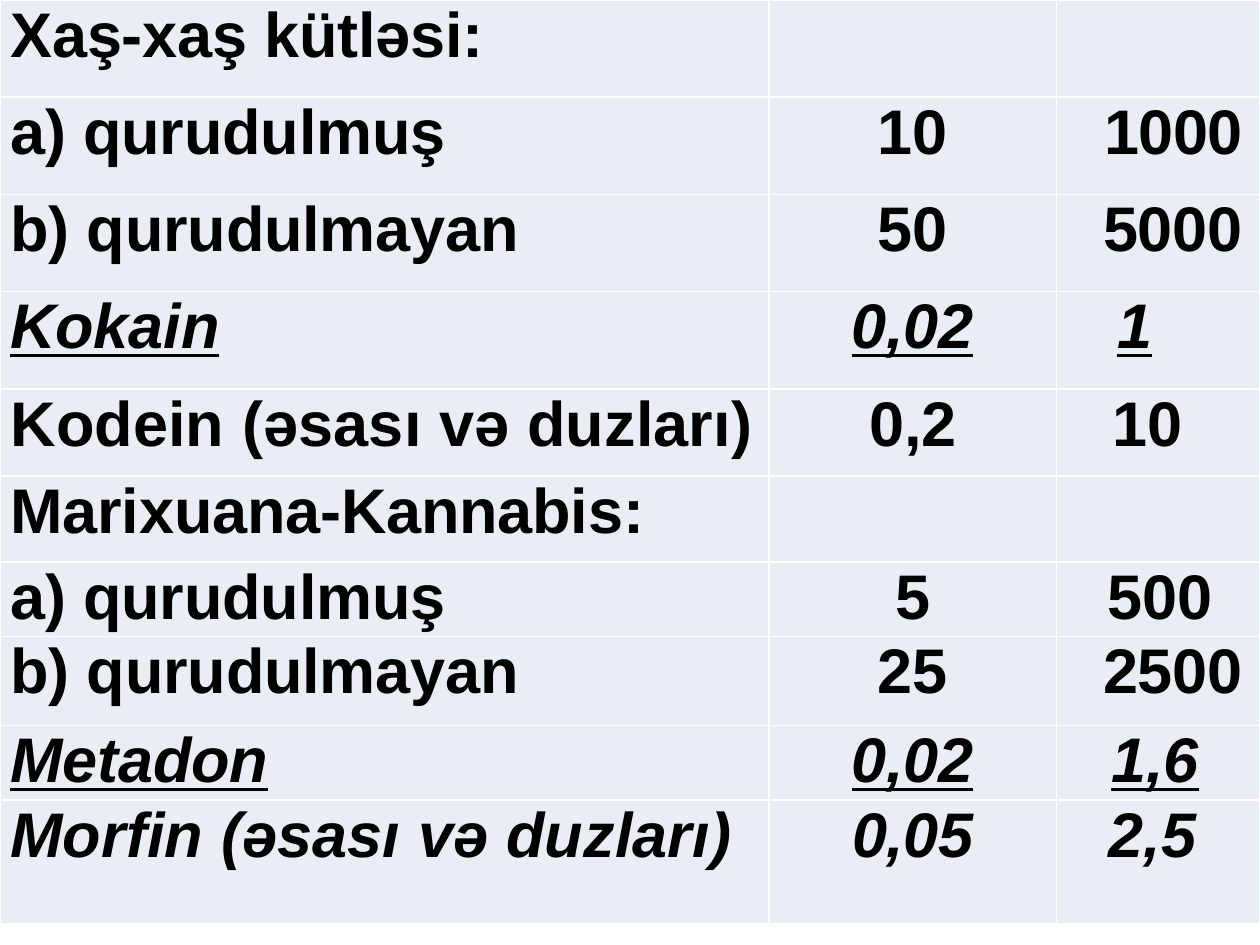
from lxml.etree import SubElement
from pptx import Presentation
from pptx.dml.color import RGBColor
from pptx.enum.text import PP_ALIGN as Align
from pptx.oxml.ns import qn
from pptx.util import Cm, Pt

COLORS = {"text": "000000", "cell": "E9EDF4", "border": "FFFFFF"}
COL_WIDTHS = [15.5, 5.8, 4.1]
LABEL_INDENT = 0.13

# Row height, style ("b" bold, "i" italic, "u" underline), then for label,
# small amount and large amount: text and letter spacing; last, indent of the large amount
ROWS = [
    (1.96, "b", ("Xaş-xaş kütləsi:", -0.1), None, None, 0),
    (1.96, "b", ("a) qurudulmuş", -0.1), ("10", 0), ("1000", -0.5), 0.89),
    (1.96, "b", ("b) qurudulmayan", -0.1), ("50", 0), ("5000", -0.2), 0.86),
    (1.96, "biu", ("Kokain", -0.1), ("0,02", -0.2), ("1", 0), 1.14),
    (1.76, "b", ("Kodein (əsası və duzları)", 0.1), ("0,2", 0), ("10", 0), 1.04),
    (1.73, "b", ("Marixuana-Kannabis:", -0.1), None, None, 0),
    (1.5, "b", ("a) qurudulmuş", -0.1), ("5", 0), ("500", 0), 0.94),
    (1.8, "b", ("b) qurudulmayan", -0.1), ("25", 0), ("2500", -0.2), 0.86),
    (1.5, "biu", ("Metadon", -0.1), ("0,02", -0.2), ("1,6", 0), 1.02),
    (2.5, "bi", ("Morfin (əsası və duzları)", 0.1), ("0,05", -0.3), ("2,5", 0), 0.97),
]


def rgb(name):
    return RGBColor.from_string(COLORS[name])


def set_borders(cell):
    tc_pr = cell._tc.get_or_add_tcPr()
    for i, side in enumerate(("lnL", "lnR", "lnT", "lnB")):
        ln = tc_pr.makeelement(qn(f"a:{side}"), {"w": str(Pt(1))})
        fill = SubElement(ln, qn("a:solidFill"))
        SubElement(fill, qn("a:srgbClr"), val=COLORS["border"])
        tc_pr.insert(i, ln)


def format_cell(cell):
    cell.fill.solid()
    cell.fill.fore_color.rgb = rgb("cell")
    cell.margin_left = cell.margin_right = Cm(0.08)
    cell.margin_top = cell.margin_bottom = 0
    set_borders(cell)


def write_cell(cell, text, spacing, style, indent=0, align=Align.LEFT):
    p = cell.text_frame.paragraphs[0]
    p.alignment = align
    p_pr = p._p.get_or_add_pPr()
    p_pr.set("marL", str(Cm(indent)))
    p_pr.set("indent", "0")
    font = p.font
    font.name, font.size = "Arial", Pt(36)
    font.color.rgb = rgb("text")
    font.bold, font.italic, font.underline = (mark in style for mark in "biu")
    r = p.add_run()
    r.text = text
    r._r.get_or_add_rPr().set("spc", str(round(spacing * 100)))


def add_amounts_table(s):
    height = sum(row[0] for row in ROWS)
    frame = s.shapes.add_table(len(ROWS), len(COL_WIDTHS), 0, 0,
                               Cm(sum(COL_WIDTHS)), Cm(height))
    table = frame.table
    table.first_row = table.horz_banding = False
    for column, width in zip(table.columns, COL_WIDTHS):
        column.width = Cm(width)
    for row, (height, style, label, small, large, indent) in zip(table.rows, ROWS):
        row.height = Cm(height)
        for cell in row.cells:
            format_cell(cell)
        write_cell(row.cells[0], *label, style, LABEL_INDENT)
        if small:
            write_cell(row.cells[1], *small, style, align=Align.CENTER)
            write_cell(row.cells[2], *large, style, indent)


def main():
    prs = Presentation()
    prs.slide_width, prs.slide_height = Cm(25.4), Cm(19.05)
    s = prs.slides.add_slide(prs.slide_layouts[6])
    add_amounts_table(s)
    prs.save("out.pptx")


if __name__ == "__main__":
    main()
